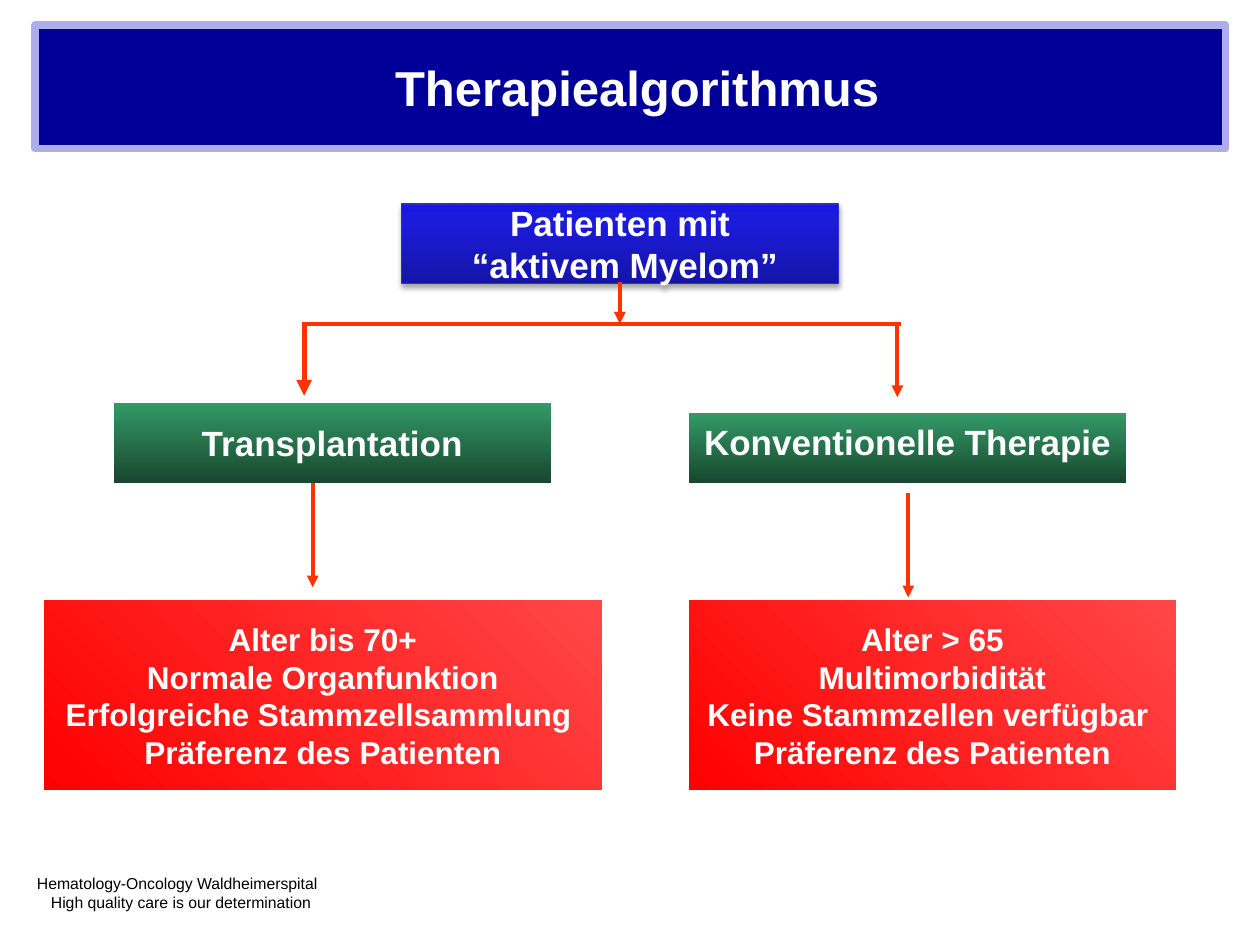
from copy import deepcopy
from dataclasses import dataclass
from typing import Any

from lxml.etree import SubElement
from pptx import Presentation
from pptx.dml.color import RGBColor
from pptx.enum.shapes import MSO_CONNECTOR, MSO_SHAPE
from pptx.enum.text import MSO_ANCHOR, PP_ALIGN
from pptx.oxml.ns import qn
from pptx.util import Pt


@dataclass(frozen=True)
class Theme:
    font: str = "Arial"
    white: str = "FFFFFF"
    black: str = "000000"
    navy: str = "000099"
    lilac: str = "ADADEB"
    rim: str = "2E2ECB"
    arrow: str = "FF3300"
    blue: tuple = ((0, "1515A9"), (0.8, "1B1BDC"), (1, "1818E1"))
    green: tuple = ((0, "339966"), (1, "18472F"))
    red: tuple = ((0, "FF0000"), (1, "FF4747"))
    head: int = 28
    node: int = 20
    facts: int = 18
    foot: int = 9


@dataclass(frozen=True)
class Box:
    left: float
    top: float
    width: float
    height: float
    lines: tuple
    stops: tuple
    angle: int
    size: int
    rim: str = ""
    space: float = 1.0


@dataclass(frozen=True)
class Line:
    start: tuple
    end: tuple
    width: float = 2.25
    tip: bool = True


def apply(item: Any, form: dict) -> None:
    for key, value in form.items():
        setattr(item, key, value)


def tint(hue: str) -> RGBColor:
    return RGBColor.from_string(hue)


def write(frame: Any, lines: tuple, font: dict, hue: str, form: dict) -> None:
    for index, line in enumerate(lines):
        para = frame.add_paragraph() if index else frame.paragraphs[0]
        apply(para, form)
        run = para.add_run()
        run.text = line
        apply(run.font, font)
        run.font.color.rgb = tint(hue)


def shade(shape: Any, stops: tuple, angle: int) -> None:
    fill = shape.fill
    fill.gradient()
    fill.gradient_angle = angle
    group = shape._element.spPr.find(".//" + qn("a:gsLst"))
    for _ in stops[2:]:
        group.append(deepcopy(group[-1]))
    for stop, (place, hue) in zip(fill.gradient_stops, stops):
        stop.position = place
        stop.color.rgb = tint(hue)


def cast(shape: Any, hue: str) -> None:
    glow = shape._element.spPr.find(qn("a:effectLst"))
    drop = SubElement(glow, qn("a:outerShdw"), blurRad=str(Pt(3.1)),
                      dist=str(Pt(1.8)), dir="5400000", rotWithShape="0")
    tone = SubElement(drop, qn("a:srgbClr"), val=hue)
    SubElement(tone, qn("a:alpha"), val="35000")


def edge(line: Any, hue: str, width: float) -> None:
    line.color.rgb = tint(hue)
    line.width = Pt(width)


def draw_box(shapes: Any, box: Box, theme: Theme) -> None:
    area = map(Pt, (box.left, box.top, box.width, box.height))
    shape = shapes.add_shape(MSO_SHAPE.RECTANGLE, *area)
    shape.shadow.inherit = False
    shade(shape, box.stops, box.angle)
    if box.rim:
        edge(shape.line, box.rim, 0.75)
        cast(shape, theme.black)
    else:
        shape.line.fill.background()
    frame = shape.text_frame
    apply(frame, {"word_wrap": False, "vertical_anchor": MSO_ANCHOR.MIDDLE})
    write(frame, box.lines,
          {"name": theme.font, "size": Pt(box.size), "bold": True},
          theme.white,
          {"alignment": PP_ALIGN.CENTER, "line_spacing": box.space})


def draw_line(shapes: Any, line: Line, theme: Theme) -> None:
    ends = map(Pt, line.start + line.end)
    link = shapes.add_connector(MSO_CONNECTOR.STRAIGHT, *ends)
    edge(link.line, theme.arrow, line.width)
    if line.tip:
        SubElement(link.line._get_or_add_ln(), qn("a:tailEnd"), type="triangle")
    SubElement(link._element.spPr, qn("a:effectLst"))


def draw_title(title: Any, theme: Theme) -> None:
    apply(title, {"left": Pt(20), "top": Pt(14.4),
                  "width": Pt(680.4), "height": Pt(70.6)})
    title.fill.solid()
    title.fill.fore_color.rgb = tint(theme.navy)
    edge(title.line, theme.lilac, 4.25)
    title.text_frame.vertical_anchor = MSO_ANCHOR.MIDDLE
    write(title.text_frame, (" Therapiealgorithmus",),
          {"name": theme.font, "size": Pt(theme.head), "bold": True},
          theme.white, {"alignment": PP_ALIGN.CENTER})


def draw_foot(shapes: Any, theme: Theme) -> None:
    frame = shapes.add_textbox(Pt(0), Pt(495.6), Pt(215), Pt(33)).text_frame
    frame.word_wrap = True
    write(frame, ("Hematology-Oncology Waldheimerspital",
                  "High quality care is our determination"),
          {"name": theme.font, "size": Pt(theme.foot)}, theme.black,
          {"alignment": PP_ALIGN.LEFT})
    for para, left in zip(frame.paragraphs, (14, 22)):
        para._p.get_or_add_pPr().set("marL", str(Pt(left)))


def main() -> None:
    theme = Theme()
    deck = Presentation()
    apply(deck, {"slide_width": Pt(720), "slide_height": Pt(540)})
    slide = deck.slides.add_slide(deck.slide_layouts[5])
    shapes = slide.shapes
    wide, right, base = 249.8, 393.8, 343.4
    boxes = (
        Box(229.5, 116.6, wide, 45.4, ("Patienten mit", " “aktivem Myelom”"),
            theme.blue, 90, theme.node, theme.rim),
        Box(65, 230.4, wide, 45.4, ("Transplantation",),
            theme.green, 270, theme.node),
        Box(right, 236.2, wide, 39.6, ("Konventionelle Therapie",),
            theme.green, 270, theme.node, space=0.6),
        Box(25.2, base, 318.6, 108,
            ("Alter bis 70+", "Normale Organfunktion",
             "Erfolgreiche Stammzellsammlung ", "Präferenz des Patienten"),
            theme.red, 45, theme.facts),
        Box(right, base, 278, 108,
            ("Alter > 65", "Multimorbidität",
             "Keine Stammzellen verfügbar ", "Präferenz des Patienten"),
            theme.red, 45, theme.facts),
    )
    fork = 185
    lines = (
        Line((178.7, 275.8), (178.7, 335.6)),
        Line((519, 281.5), (519, 341.3)),
        Line((173.8, fork), (173.8, 226.1), 3),
        Line((512.8, fork), (512.8, 226.9)),
        Line((354.2, 161.3), (354.2, fork)),
        Line((172.8, fork), (514.8, fork), tip=False),
    )
    draw_foot(shapes, theme)
    draw_title(shapes.title, theme)
    for box in boxes:
        draw_box(shapes, box, theme)
    for line in lines:
        draw_line(shapes, line, theme)
    deck.save("out.pptx")


if __name__ == "__main__":
    main()
